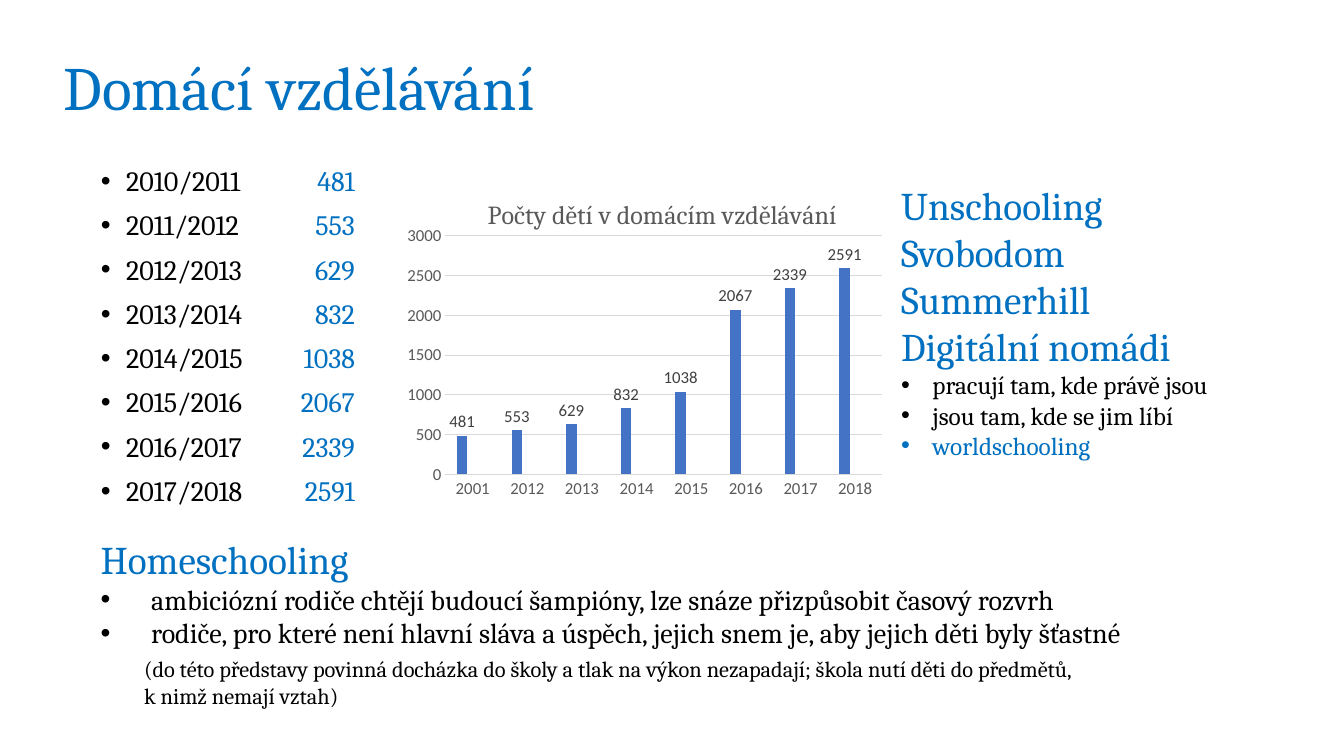
from lxml import etree
from pptx import Presentation
from pptx.chart.data import CategoryChartData
from pptx.dml.color import RGBColor
from pptx.enum.chart import XL_CHART_TYPE, XL_LABEL_POSITION, XL_TICK_MARK
from pptx.enum.text import MSO_ANCHOR, MSO_AUTO_SIZE, PP_ALIGN
from pptx.oxml.ns import qn
from pptx.util import Inches, Pt

COLUMN = XL_CHART_TYPE.COLUMN_CLUSTERED
OUTSIDE = XL_LABEL_POSITION.OUTSIDE_END
NO_TICK = XL_TICK_MARK.NONE
LEFT = PP_ALIGN.LEFT
MIDDLE = MSO_ANCHOR.MIDDLE
NO_FIT = MSO_AUTO_SIZE.NONE

BLUE, BLACK, GRAY, RULE = "0070C0", "000000", "595959", "D9D9D9"
SERIF, SANS = "Cambria", "Calibri"

TITLE = "Domácí vzdělávání"
COUNTS = [
    ("2010/2011", 481), ("2011/2012", 553), ("2012/2013", 629), ("2013/2014", 832),
    ("2014/2015", 1038), ("2015/2016", 2067), ("2016/2017", 2339), ("2017/2018", 2591),
]
YEARS = ["2001", "2012", "2013", "2014", "2015", "2016", "2017", "2018"]
CAPTION = "Počty dětí v domácím vzdělávání"
SERIES = [("Series 1", "4472C4"), ("Series 2", "ED7D31"), ("Series 3", "A5A5A5")]

HEAD = {"size": 28, "color": BLUE}
POINT = {"size": 20, "color": BLACK, "indent": 0.5, "bullet": True}
NOTE = {"size": 16, "color": BLACK, "indent": 0.43, "before": 4}
ITEM = {"size": 18, "color": BLACK, "indent": 0.31, "bullet": True}
HOME = [
    ("Homeschooling", HEAD),
    ("ambiciózní rodiče chtějí budoucí šampióny, lze snáze přizpůsobit časový rozvrh", POINT),
    ("rodiče, pro které není hlavní sláva a úspěch, jejich snem je, "
     "aby jejich děti byly šťastné", POINT),
    ("(do této představy povinná docházka do školy a tlak na výkon nezapadají; "
     "škola nutí děti do předmětů,\vk nimž nemají vztah)", NOTE),
]
TRENDS = [
    ("Unschooling", HEAD), ("Svobodom", HEAD), ("Summerhill", HEAD), ("Digitální nomádi", HEAD),
    ("pracují tam, kde právě jsou", ITEM),
    ("jsou tam, kde se jim líbí", ITEM),
    ("worldschooling", {**ITEM, "color": BLUE}),
]


def paint(text):
    return RGBColor.from_string(text)


def style(font, size, color, name=SERIF):
    for key, value in {"size": Pt(size), "name": name, "bold": False}.items():
        setattr(font, key, value)
    font.color.rgb = paint(color)


def place(shape, box):
    for key, value in zip(("left", "top", "width", "height"), box):
        setattr(shape, key, Inches(value))


def indent(para, left, bullet):
    props = para._p.get_or_add_pPr()
    props.set("marL", str(Inches(left)))
    props.set("indent", str(-Inches(left) if bullet else 0))
    if bullet:
        etree.SubElement(props, qn("a:buFont")).set("typeface", "Arial")
        etree.SubElement(props, qn("a:buChar")).set("char", "•")
    return props


def write(box, wrap, lines):
    shape = slide.shapes.add_textbox(*map(Inches, box))
    frame = shape.text_frame
    frame.word_wrap = wrap
    for num, (text, form) in enumerate(lines):
        para = frame.add_paragraph() if num else frame.paragraphs[0]
        para.text = text
        para.space_before = Pt(form.get("before", 0))
        indent(para, form.get("indent", 0), form.get("bullet", False))
        for run in para.runs:
            style(run.font, form["size"], form["color"])


def arrange(parent, index, spots):
    for old in parent.findall(qn("c:layout")):
        parent.remove(old)
    layout = etree.Element(qn("c:layout"))
    parent.insert(index, layout)
    manual = etree.SubElement(layout, qn("c:manualLayout"))
    for key, value in spots.items():
        etree.SubElement(manual, qn("c:" + key)).set("val", str(value))


deck = Presentation()
deck.slide_width, deck.slide_height = Inches(13.33), Inches(7.5)
slide = deck.slides.add_slide(deck.slide_layouts[1])

title = slide.shapes.title
place(title, (0.53, 0.34, 11.5, 1.11))
frame = title.text_frame
frame.text = TITLE
frame.vertical_anchor = MIDDLE
para = frame.paragraphs[0]
para.alignment, para.line_spacing = LEFT, 0.9
style(para.runs[0].font, 44, BLUE)

body = slide.placeholders[1]
place(body, (0.9, 1.61, 12.07, 5.37))
frame = body.text_frame
frame.auto_size = NO_FIT
for num, (term, count) in enumerate(COUNTS):
    para = frame.add_paragraph() if num else frame.paragraphs[0]
    para.line_spacing, para.space_before = 0.9, Pt(10)
    tabs = etree.SubElement(indent(para, 0.25, True), qn("a:tabLst"))
    tab = etree.SubElement(tabs, qn("a:tab"))
    tab.set("pos", str(Inches(2.52)))
    tab.set("algn", "r")
    for text, color in ((term + "\t", BLACK), (str(count), BLUE)):
        run = para.add_run()
        run.text = text
        style(run.font, 20, color)

data = CategoryChartData()
data.categories = YEARS
values = [count for term, count in COUNTS]
for num, (name, color) in enumerate(SERIES):
    data.add_series(name, [None] * len(YEARS) if num else values)
chart = slide.shapes.add_chart(COLUMN, *map(Inches, (3.72, 1.71, 5.63, 3.29)), data).chart
style(chart.font, 10, BLACK, SANS)
chart.has_legend = False
chart.has_title = True
head = chart.chart_title
head.text_frame.text = CAPTION
style(head.text_frame.paragraphs[0].runs[0].font, 18.6, GRAY)
arrange(head._element, 1, {"xMode": "edge", "yMode": "edge", "x": 0.19, "y": 0.06})
arrange(chart._chartSpace.chart.plotArea, 0, {
    "layoutTarget": "inner", "xMode": "edge", "yMode": "edge",
    "x": 0.124, "y": 0.192, "w": 0.77, "h": 0.719})

years, scale = chart.category_axis, chart.value_axis
for axis in (years, scale):
    axis.major_tick_mark = axis.minor_tick_mark = NO_TICK
    style(axis.tick_labels.font, 12, GRAY, SANS)
scale.minimum_scale, scale.maximum_scale, scale.major_unit = 0, 3000, 500
scale.format.line.fill.background()
for line in (years.format.line, scale.major_gridlines.format.line):
    line.color.rgb = paint(RULE)
    line.width = Pt(0.75)

plot = chart.plots[0]
plot.gap_width, plot.overlap, plot.vary_by_categories = 219, 0, False
for series, (name, color) in zip(plot.series, SERIES):
    series.format.fill.solid()
    series.format.fill.fore_color.rgb = paint(color)
    labels = series.data_labels
    labels.show_value, labels.position = True, OUTSIDE
    style(labels.font, 12, "404040", SANS)

write((0.9, 5.26, 12.02, 1.85), True, HOME)
write((8.84, 1.75, 3.54, 2.89), False, TRENDS)

deck.save("out.pptx")
